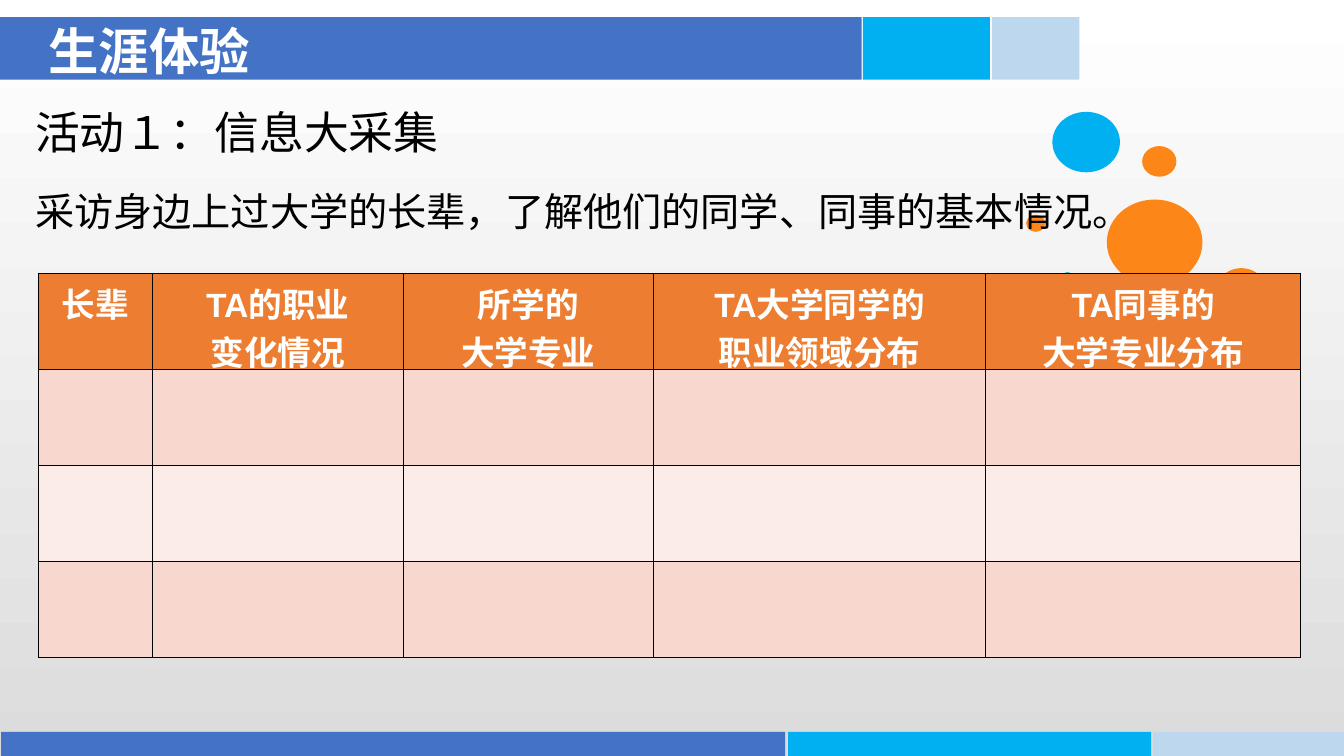
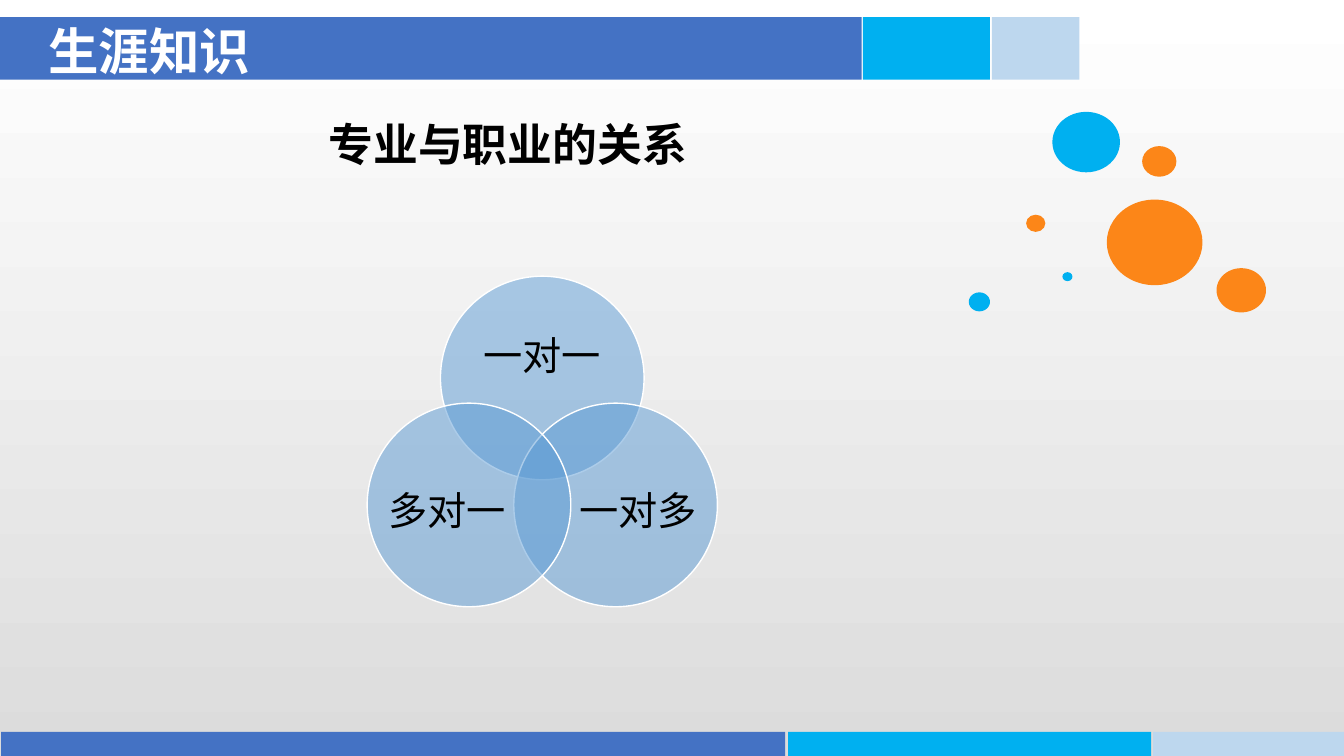
"""Two career-planning slides: an interview table and a three-circle diagram."""
from dataclasses import dataclass
from math import cos, radians, sin

from lxml import etree
from pptx import Presentation
from pptx.dml.color import RGBColor
from pptx.enum import lang, shapes, text
from pptx.oxml import ns
from pptx import util as u


@dataclass(frozen=True)
class Theme:
    """Colours, fonts and type sizes of the presentation."""
    blue: str = "4472C4"
    cyan: str = "00B0F0"
    pale: str = "BDD7EE"
    orange: str = "FC8618"
    circle: str = "5B9BD5"
    header: str = "ED7D31"
    stripes: tuple = ("F8D7CE", "FCECE8")
    backdrop: tuple = ("FFFFFF", "DCDCDC")
    white: str = "FFFFFF"
    black: str = "000000"
    latin: str = "Arial"
    chinese: str = "Noto Sans CJK SC"
    title: int = 36
    heading: int = 32
    body: int = 28
    cell: int = 24


THEME = Theme()
RECTANGLE, OVAL = shapes.MSO_SHAPE.RECTANGLE, shapes.MSO_SHAPE.OVAL
NO_MARGINS = {f"margin_{side}": 0 for side in ("left", "top", "right", "bottom")}
TOP_BAND = ((0, 64.12, THEME.blue), (64.2, 9.45, THEME.cyan), (73.8, 6.52, THEME.pale))
BOTTOM_BAND = ((0.08, 58.35, THEME.blue), (58.65, 27, THEME.cyan), (85.8, 14.2, THEME.pale))
DOTS = (
    (72.08, 38.67, 1.58, THEME.cyan),
    (82.35, 26.4, 7.12, THEME.orange),
    (78.3, 14.8, 5.03, THEME.cyan),
    (90.52, 35.47, 3.68, THEME.orange),
    (84.98, 19.33, 2.55, THEME.orange),
    (76.35, 28.4, 1.43, THEME.orange),
    (79.05, 36, 0.75, THEME.cyan),
)


def apply(target, values):
    """Set each named attribute on the target."""
    for name, value in values.items():
        setattr(target, name, value)


def add_child(parent, tag, **attributes):
    """Append a drawing element with the given attributes."""
    return etree.SubElement(parent, ns.qn(tag), attributes)


class Deck:
    """Holds the theme and the current slide; lengths are percentages of the slide."""

    def __init__(self, theme):
        self.theme = theme
        self.presentation = Presentation()
        apply(self.presentation, {"slide_width": u.Inches(13.33), "slide_height": u.Inches(7.5)})
        self.layout = self.presentation.slide_layouts.get_by_name("Title Only")
        self.slide = None

    def across(self, share):
        """Convert a share of the width to a length."""
        return u.Emu(round(self.presentation.slide_width * share / 100))

    def down(self, share):
        """Convert a share of the height to a length."""
        return u.Emu(round(self.presentation.slide_height * share / 100))

    def box(self, left, top, width, height):
        """Convert four shares to a position and a size."""
        return self.across(left), self.down(top), self.across(width), self.down(height)

    def add_slide(self, title):
        """Start a slide with its title in the top band."""
        self.slide = self.presentation.slides.add_slide(self.layout)
        if len(self.presentation.slides) == 1:
            self.decorate_layout()
        placeholder = self.slide.shapes.title
        apply(placeholder, dict(zip(("left", "top", "width", "height"),
                                    self.box(2.85, 3.2, 29.1, 6.8))))
        apply(placeholder.text_frame, {"vertical_anchor": text.MSO_ANCHOR.MIDDLE,
                                       "auto_size": text.MSO_AUTO_SIZE.NONE})
        self.fill_text(placeholder.text_frame, title, self.theme.title, self.theme.white,
                       bold=True, latin=self.theme.chinese)

    def decorate_layout(self):
        """Give the layout its gradient, bands and dots."""
        fill = self.layout.background.fill
        fill.gradient()
        fill.gradient_angle = 270
        for stop, color in zip(fill.gradient_stops, self.theme.backdrop):
            stop.color.rgb = RGBColor.from_string(color)
        parts = [self.add_shape(RECTANGLE, (left, top, width, height), color)
                 for band, top, height in ((TOP_BAND, 2.27, 8.27), (BOTTOM_BAND, 96.8, 3.2))
                 for left, width, color in band]
        parts += [self.add_shape(OVAL, (left, top, width, width * 1.59), color)
                  for left, top, width, color in DOTS]
        for part in parts:
            self.layout.shapes._spTree.append(part._element)

    def add_shape(self, kind, area, color, opacity=None, outline=None):
        """Add a flat preset shape."""
        shape = self.slide.shapes.add_shape(kind, *self.box(*area))
        shape.shadow.inherit = False
        shape.fill.solid()
        shape.fill.fore_color.rgb = RGBColor.from_string(color)
        if opacity:
            add_child(shape._element.spPr.find(".//" + ns.qn("a:srgbClr")), "a:alpha",
                      val=str(opacity * 1000))
        if outline:
            shape.line.color.rgb = RGBColor.from_string(outline)
            shape.line.width = u.Pt(1)
        else:
            shape.line.fill.background()
        return shape

    def add_text(self, area, words, size, frame_format=None, **style):
        """Add a wrapped text box."""
        frame = self.slide.shapes.add_textbox(*self.box(*area)).text_frame
        apply(frame, {"word_wrap": True, "auto_size": text.MSO_AUTO_SIZE.SHAPE_TO_FIT_TEXT,
                      **(frame_format or {})})
        self.fill_text(frame, words, size, self.theme.black, **style)

    def fill_text(self, frame, words, size, color, bold=False, latin=None,
                  align=text.PP_ALIGN.LEFT, spacing=None):
        """Fill a text frame, one paragraph for each line."""
        for index, line in enumerate(words.split("\n")):
            paragraph = frame.add_paragraph() if index else frame.paragraphs[0]
            apply(paragraph, {"alignment": align, "line_spacing": spacing})
            run = paragraph.add_run()
            run.text = line
            apply(run.font, {"size": u.Pt(size), "bold": bold,
                             "name": latin or self.theme.latin,
                             "language_id": lang.MSO_LANGUAGE_ID.SIMPLIFIED_CHINESE})
            run.font.color.rgb = RGBColor.from_string(color)
            add_child(run._r.get_or_add_rPr(), "a:ea", typeface=self.theme.chinese)

    def add_table(self, area, widths, headers, blank_rows):
        """Add a bordered table with a header row and blank striped rows."""
        count = blank_rows + 1
        table = self.slide.shapes.add_table(count, len(headers), *self.box(*area)).table
        apply(table, {"first_row": False, "horz_banding": False})
        for column, width in zip(table.columns, widths):
            column.width = self.across(width)
        for index, row in enumerate(table.rows):
            row.height = self.down(area[3] / count)
            color = self.theme.stripes[(index - 1) % 2] if index else self.theme.header
            for cell in row.cells:
                self.paint_cell(cell, color)
        for cell, words in zip(table.rows[0].cells, headers):
            cell.margin_bottom = 0
            self.fill_text(cell.text_frame, words, self.theme.cell, self.theme.white,
                           bold=True, align=text.PP_ALIGN.CENTER)

    def paint_cell(self, cell, color):
        """Give a cell thin borders and a solid fill."""
        properties = cell._tc.get_or_add_tcPr()
        for side in "LRTB":
            line = add_child(properties, f"a:ln{side}", w=str(int(u.Pt(1))))
            add_child(add_child(line, "a:solidFill"), "a:srgbClr", val=self.theme.black)
        cell.fill.solid()
        cell.fill.fore_color.rgb = RGBColor.from_string(color)

    def add_venn(self, center, orbit, size, labels):
        """Add translucent circles around a centre, each with a label on its outer part."""
        width, height = size
        for index, label in enumerate(labels):
            angle = radians(index * 360 / len(labels) - 90)
            x = center[0] + orbit[0] * cos(angle)
            y = center[1] + orbit[1] * sin(angle)
            self.add_shape(OVAL, (x - width / 2, y - height / 2, width, height),
                           self.theme.circle, opacity=50, outline=self.theme.white)
            x, y = x + 1.9 * cos(angle), y + (1 if index else -2.73)
            self.add_text((x - 4.6, y - 7, 9.2, 14), label, self.theme.body,
                          {"vertical_anchor": text.MSO_ANCHOR.MIDDLE,
                           "auto_size": text.MSO_AUTO_SIZE.NONE, **NO_MARGINS},
                          align=text.PP_ALIGN.CENTER, spacing=0.9)


def main():
    """Build both slides and save them."""
    deck = Deck(THEME)

    deck.add_slide("生涯体验")
    deck.add_text((1.88, 24.13, 84.08, 7.6), "采访身边上过大学的长辈，了解他们的同学、同事的基本情况。",
                  THEME.body, latin=THEME.chinese)
    deck.add_text((1.88, 13.2, 39.08, 8.53), "活动１：信息大采集", THEME.heading)
    deck.add_table((2.85, 36.13, 93.98, 50.8), (8.48, 18.68, 18.6, 24.75, 23.4),
                   ("长辈", "TA的职业\n变化情况", "所学的\n大学专业",
                    "TA大学同学的\n职业领域分布", "TA同事的\n大学专业分布"), blank_rows=3)

    deck.add_slide("生涯知识")
    deck.add_text((23.7, 14.8, 33.08, 8.53), "专业与职业的关系", THEME.heading, bold=True)
    deck.add_venn((40.35, 61.2), (6.3, 11.2), (15.15, 26.93), ("一对一", "一对多", "多对一"))

    deck.presentation.save("out.pptx")


if __name__ == "__main__":
    main()
